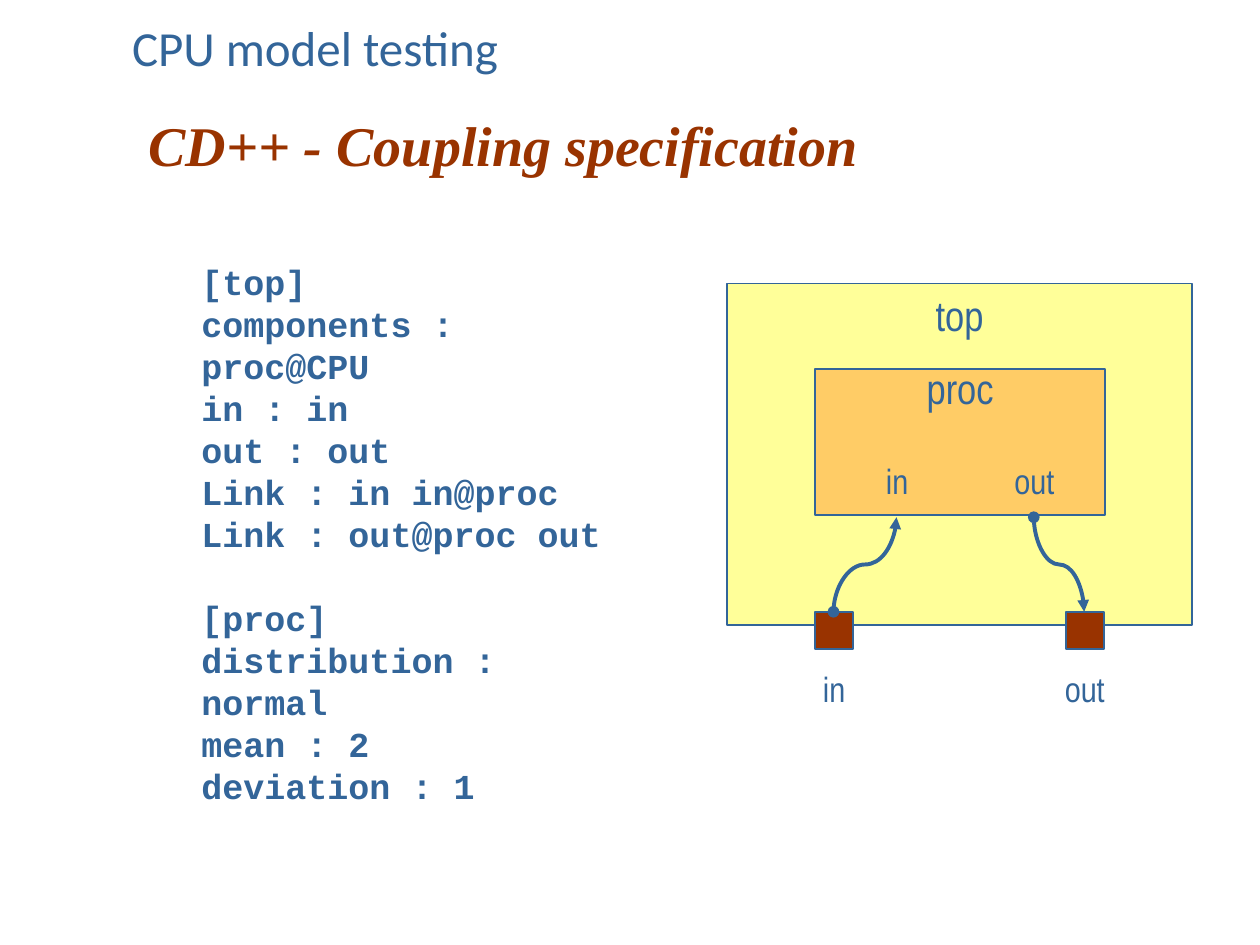
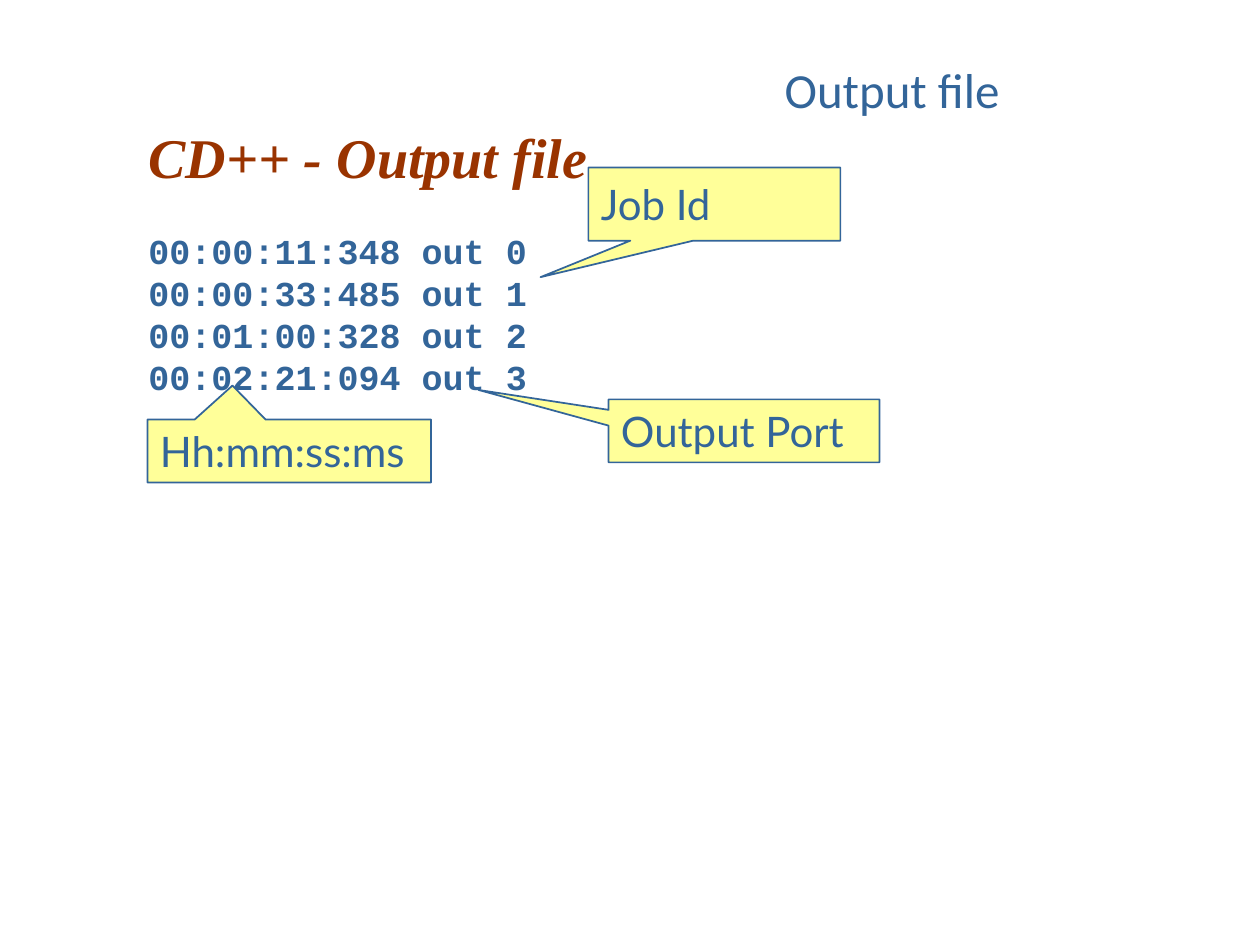
from pptx import Presentation
from pptx.dml.color import RGBColor
from pptx.enum.shapes import MSO_CONNECTOR, MSO_SHAPE
from pptx.enum.text import MSO_ANCHOR, PP_ALIGN
from pptx.oxml.ns import qn
from pptx.util import Emu, Pt
from lxml.etree import SubElement

# Shared scale, colours and fonts
PX = 9144  # 100 px to the inch
BLUE, RUST = "336599", "993300"
YELLOW, ORANGE = "FFFF99", "FFCC66"
CODE_FONT, LABEL_FONT, CALLOUT_FONT = "Courier New", "Arial Narrow", "Lato"
LINE_PITCH = 1.2


def px(*lengths):
    return [Emu(length * PX) for length in lengths]


def color(hex_value):
    return RGBColor.from_string(hex_value)


def add_run(paragraph, text, font_name, size, hex_value=BLUE, bold=False, italic=False):
    run = paragraph.add_run()
    run.text = text
    font = run.font
    font.name, font.size = font_name, Pt(size)
    font.bold, font.italic = bold, italic
    font.color.rgb = color(hex_value)


def add_text(slide, box, lines, font_name, size, align=PP_ALIGN.LEFT, **style):
    frame = slide.shapes.add_textbox(*px(*box)).text_frame
    frame.word_wrap = True
    for number, line in enumerate(lines):
        paragraph = frame.add_paragraph() if number else frame.paragraphs[0]
        paragraph.alignment = align
        paragraph.line_spacing = Pt(size * LINE_PITCH)
        add_run(paragraph, line, font_name, size, **style)
    return frame


def add_code(slide, box, lines):
    return add_text(slide, box, lines, CODE_FONT, 20, bold=True)


def add_label(slide, box, text, size=20):
    add_text(slide, box, [text], LABEL_FONT, size, PP_ALIGN.CENTER)


def add_box(slide, box, fill, preset=MSO_SHAPE.RECTANGLE):
    shape = slide.shapes.add_shape(preset, *px(*box))
    shape.shadow.inherit = False
    shape.fill.solid()
    shape.fill.fore_color.rgb = color(fill)
    shape.line.color.rgb = color(BLUE)
    shape.line.width = Pt(1)
    return shape


def add_callout(slide, box, text, pointer):
    callout = add_box(slide, box, YELLOW, MSO_SHAPE.RECTANGULAR_CALLOUT)
    for index, offset in enumerate(pointer):
        callout.adjustments[index] = offset
    frame = callout.text_frame
    frame.word_wrap = True
    frame.vertical_anchor = MSO_ANCHOR.MIDDLE
    frame.paragraphs[0].alignment = PP_ALIGN.LEFT
    add_run(frame.paragraphs[0], text, CALLOUT_FONT, 24)


def add_link(slide, start, end, head, tail):
    """Draw a curve that leaves start downwards and enters end from above."""
    (x1, y1), (x2, y2) = start, end
    drop, shift = y2 - y1, abs(x2 - x1)
    left, right = (x1 + x2 - drop) // 2, (x1 + x2 + drop) // 2
    top, bottom = (y1 + y2 - shift) // 2, (y1 + y2 + shift) // 2
    # The curve is laid out sideways, then turned upright
    if x2 > x1:
        left, right, turn = right, left, 270
    else:
        turn = 90
    link = slide.shapes.add_connector(MSO_CONNECTOR.CURVE, *px(left, top, right, bottom))
    link.line.color.rgb = color(BLUE)
    link.line.width = Pt(2.25)
    properties = link._element.spPr
    properties.find(qn("a:xfrm")).set("rot", str(turn * 60000))
    line = properties.find(qn("a:ln"))
    SubElement(line, qn("a:headEnd")).set("type", head)
    SubElement(line, qn("a:tailEnd")).set("type", tail)
    SubElement(properties, qn("a:effectLst"))


def add_slide(deck, title, title_box, heading, heading_top):
    slide = deck.slides.add_slide(deck.slide_layouts[5])
    holder = slide.shapes.title
    holder.left, holder.top, holder.width, holder.height = px(*title_box)
    holder.text_frame.vertical_anchor = MSO_ANCHOR.MIDDLE
    paragraph = holder.text_frame.paragraphs[0]
    paragraph.alignment = PP_ALIGN.CENTER
    add_run(paragraph, title, "Calibri", 28)
    add_text(slide, (108, heading_top, 880, 63), [heading], "Times New Roman", 32,
             hex_value=RUST, bold=True, italic=True)
    return slide


def build_coupling(deck):
    slide = add_slide(deck, "CPU model testing", (0, 0, 500, 75),
                      "CD++ - Coupling specification", 83)

    # Model definition
    definition = add_code(slide, (150, 202, 360, 443), [
        "[top]", "components : proc@CPU", "in : in", "out : out",
        "Link : in in@proc", "Link : out@proc out",
        "[proc]", "distribution : normal", "mean : 2", "deviation : 1"])
    definition.paragraphs[6].space_before = Pt(24)

    # Nested models
    add_box(slide, (577, 225, 369, 271), YELLOW)
    add_box(slide, (647, 293, 230, 116), ORANGE)
    add_label(slide, (577, 225, 369, 50), "top", 24)
    add_label(slide, (647, 283, 230, 50), "proc", 24)

    # Ports: name, centre on proc, centre on top, arrowheads from proc to top
    ports = [("in", 712, 662, "triangle", "oval"),
             ("out", 821, 861, "oval", "triangle")]
    for name, inner, outer, head, tail in ports:
        add_label(slide, (inner - 35, 360, 70, 44), name)
        add_box(slide, (outer - 15, 486, 30, 29), RUST)
        add_label(slide, (outer - 45, 525, 90, 44), name)
        add_link(slide, (inner, 411), (outer, 486), head, tail)


def build_output(deck):
    slide = add_slide(deck, "Output file", (458, 33, 500, 75), "CD++ - Output file", 92)

    # Output lines
    add_code(slide, (108, 177, 383, 143), [
        "00:00:11:348 out 0", "00:00:33:485 out 1",
        "00:01:00:328 out 2", "00:02:21:094 out 3"])

    # Field explanations
    add_callout(slide, (117, 333, 225, 50), "Hh:mm:ss:ms", (-0.2, -1.04))
    add_callout(slide, (483, 317, 215, 50), "Output Port", (-0.98, -0.65))
    add_callout(slide, (467, 133, 200, 58), "Job Id", (-0.69, 1))


def main():
    deck = Presentation()
    deck.slide_width, deck.slide_height = px(1000, 750)
    build_coupling(deck)
    build_output(deck)
    deck.save("out.pptx")


if __name__ == "__main__":
    main()
